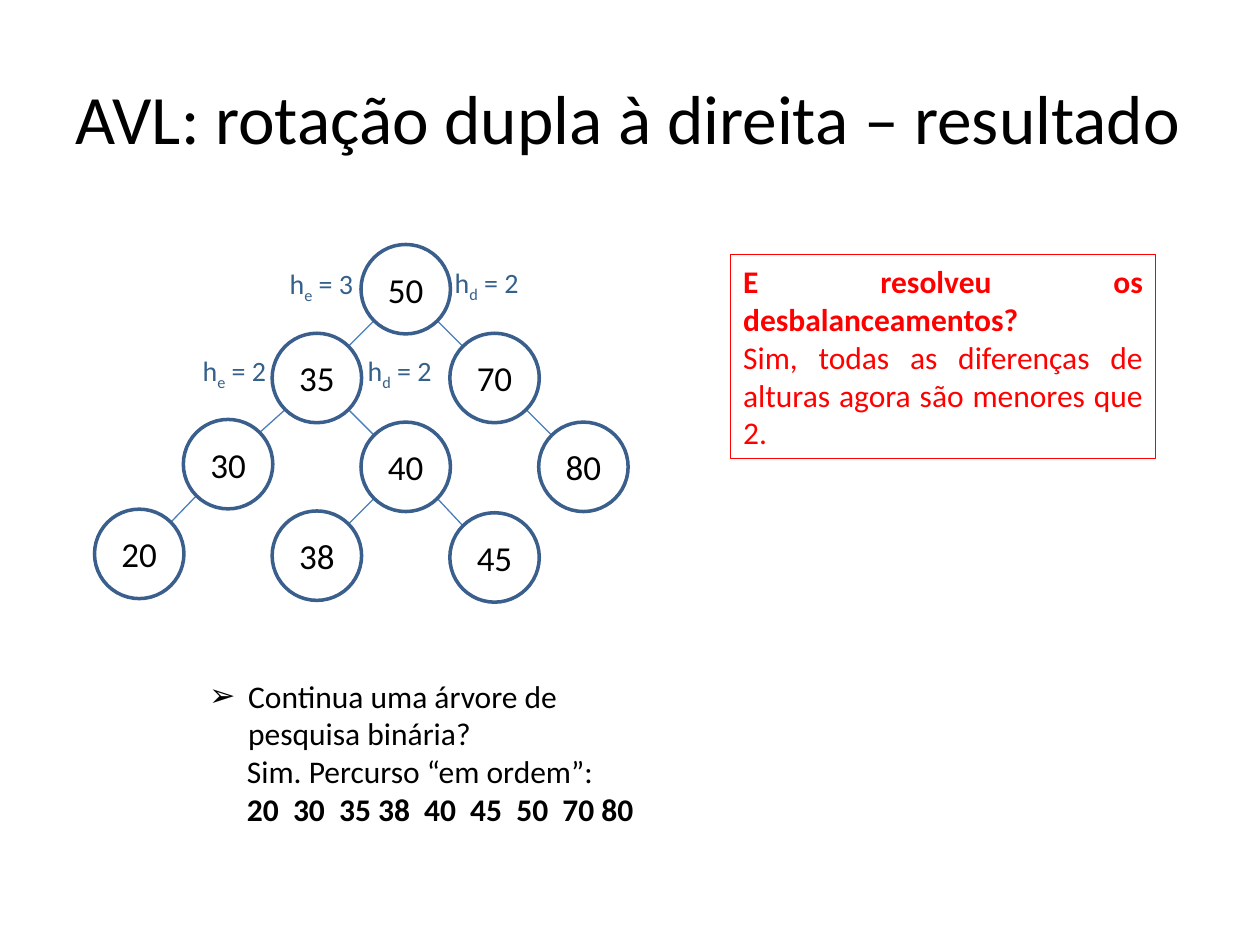
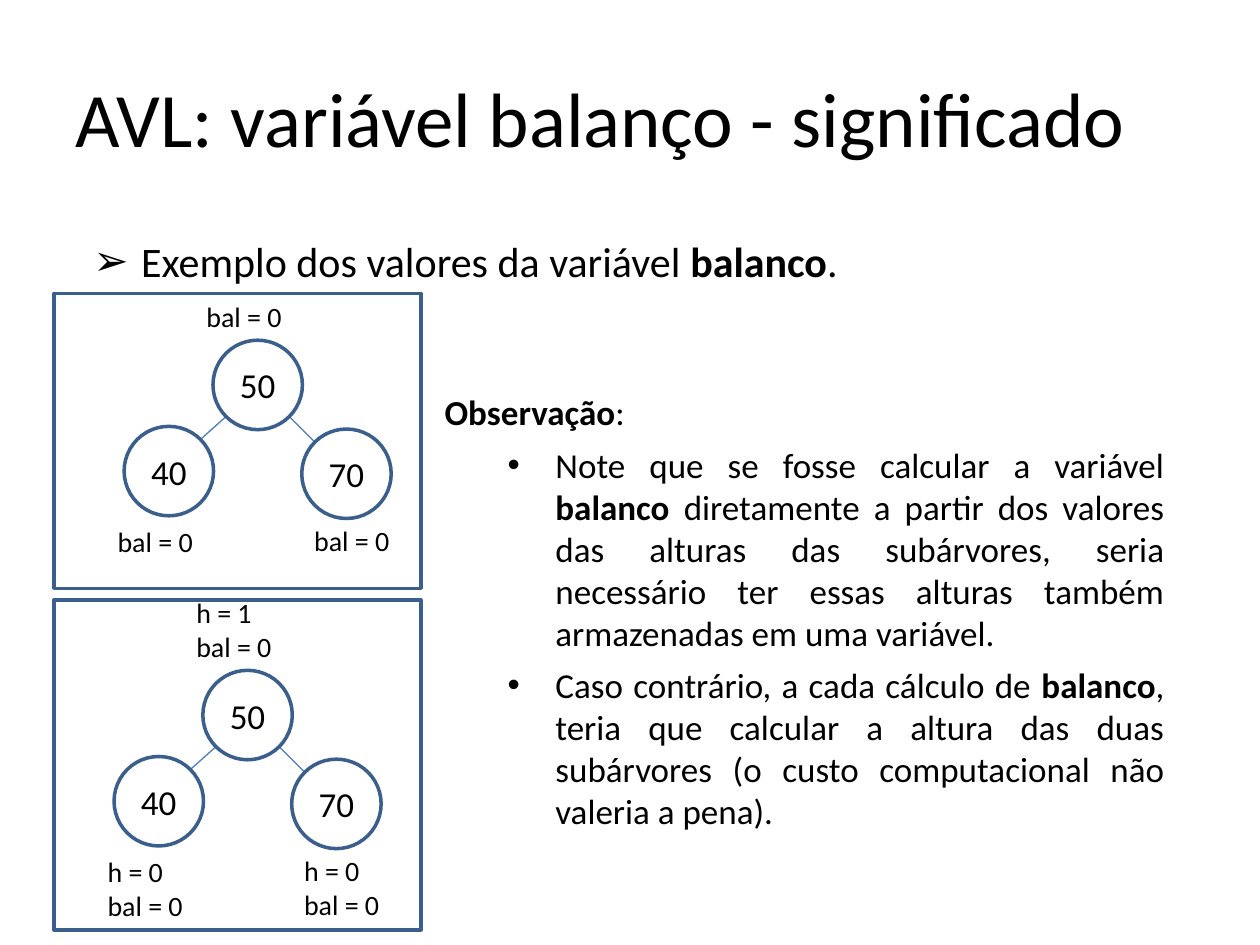
from dataclasses import dataclass
from math import sqrt

from lxml import etree
from pptx import Presentation
from pptx import util as u
from pptx.dml.color import RGBColor
from pptx.enum import shapes, text
from pptx.oxml import ns


@dataclass(frozen=True)
class Theme:
    font: str = "Calibri"
    bullet_font: str = "Arial"
    ink: str = "000000"
    outline: str = "3A5F8C"
    edge: str = "4B7EBC"
    height: str = "35608A"
    alert: str = "FF0000"
    title: float = 44
    long_title: float = 39.6
    lead: float = 24
    body: float = 20
    note: float = 18
    label: float = 16
    thick: float = 2
    thin: float = 0.75


THEME = Theme()
NODE = 0.71
STEP = 0.705
LABEL_WIDTH = 1.02
LABEL_HEIGHTS = {1: 0.37, 2: 0.64}
LEFT, CENTER, JUSTIFY = text.PP_ALIGN.LEFT, text.PP_ALIGN.CENTER, text.PP_ALIGN.JUSTIFY


def place(item, left, top, width, height):
    item.left, item.top = u.Inches(left), u.Inches(top)
    item.width, item.height = u.Inches(width), u.Inches(height)


def style_para(para, size, color=THEME.ink, align=LEFT, before=0):
    para.font.name = THEME.font
    para.font.size = u.Pt(size)
    para.font.color.rgb = RGBColor.from_string(color)
    para.alignment = align
    para.space_before = u.Pt(before)


def add_spans(para, content):
    for index, part in enumerate(content.split("**")):
        for number, line in enumerate(part.split("\n")):
            if number:
                para.add_line_break()
            if line:
                span = para.add_run()
                span.text = line
                if index % 2:
                    span.font.bold = True


def set_indent(para, margin, hanging=0, bullet=None):
    properties = para._p.get_or_add_pPr()
    properties.set("marL", str(u.Inches(margin)))
    properties.set("indent", str(u.Inches(-hanging)))
    if bullet:
        face = etree.SubElement(properties, ns.qn("a:buFont"))
        face.set("typeface", THEME.bullet_font)
        etree.SubElement(properties, ns.qn("a:buChar")).set("char", bullet)
    else:
        etree.SubElement(properties, ns.qn("a:buNone"))


def next_para(frame):
    first = frame.paragraphs[0]
    return frame.add_paragraph() if first.runs else first


def write(frame, content, size, color=THEME.ink, align=LEFT, before=0, indent=None):
    para = next_para(frame)
    if indent:
        set_indent(para, *indent)
    add_spans(para, content)
    style_para(para, size, color, align, before)


def fix_frame(item):
    frame = item.text_frame
    frame.word_wrap = True
    frame.auto_size = text.MSO_AUTO_SIZE.NONE
    return frame


def add_page(deck, title, size, width, body_at):
    page = deck.slides.add_slide(deck.slide_layouts[1])
    heading, body = page.placeholders
    place(heading, 0.5, 0.3, width, 1.25)
    write(fix_frame(heading), title, size)
    place(body, *body_at)
    return page, fix_frame(body)


def add_text_box(page, left, top, width, height):
    return fix_frame(page.shapes.add_textbox(*map(u.Inches, (left, top, width, height))))


def add_outline(page, kind, at, color=THEME.outline, weight=THEME.thick):
    item = page.shapes.add_shape(kind, *map(u.Inches, at))
    item.shadow.inherit = False
    item.fill.background()
    item.line.color.rgb = RGBColor.from_string(color)
    item.line.width = u.Pt(weight)
    return item


def add_node(page, value, left, top):
    circle = add_outline(page, shapes.MSO_SHAPE.OVAL, (left, top, NODE, NODE))
    frame = circle.text_frame
    frame.word_wrap = False
    frame.vertical_anchor = text.MSO_ANCHOR.MIDDLE
    write(frame, str(value), THEME.body, align=CENTER)


def add_edge(page, parent, child):
    reach = NODE / 2 / sqrt(2)
    side = reach if child[0] > parent[0] else -reach
    middle = NODE / 2
    ends = (parent[0] + middle + side, parent[1] + middle + reach,
            child[0] + middle - side, child[1] + middle - reach)
    edge = page.shapes.add_connector(shapes.MSO_CONNECTOR.STRAIGHT, *map(u.Inches, ends))
    edge.line.color.rgb = RGBColor.from_string(THEME.edge)
    edge.line.width = u.Pt(THEME.thin)
    etree.SubElement(edge._element.spPr, ns.qn("a:effectLst"))


def add_tree(page, left, top, nodes, edges):
    spots = {value: (left + column * STEP, top + row * STEP)
             for value, (column, row) in nodes.items()}
    for parent, child in edges:
        add_edge(page, spots[parent], spots[child])
    for value, spot in spots.items():
        add_node(page, value, *spot)
    return spots


def add_height(page, side, value, left, top):
    para = add_text_box(page, left, top, 0.78, LABEL_HEIGHTS[1]).paragraphs[0]
    for part in ("h", side, f" = {value}"):
        span = para.add_run()
        span.text = part
        if part == side:
            span._r.get_or_add_rPr().set("baseline", "-25000")
    style_para(para, THEME.label, THEME.height)


def add_label(page, lines, left, top):
    frame = add_text_box(page, left, top, LABEL_WIDTH, LABEL_HEIGHTS[len(lines)])
    for line in lines:
        write(frame, line, THEME.label)


def add_balance_panel(page, top, height, root_left, root_top, root_lines, leaf_lines):
    add_outline(page, shapes.MSO_SHAPE.RECTANGLE, (0.43, top, 2.91, height))
    spots = add_tree(page, root_left, root_top,
                     {50: (0, 0), 40: (-1, 0.97), 70: (1, 1)},
                     [(50, 40), (50, 70)])
    add_label(page, root_lines, root_left - 0.15, root_top - LABEL_HEIGHTS[len(root_lines)])
    for value, shift, drop in ((40, -0.15, 0.73), (70, 0, 0.7)):
        left, node_top = spots[value]
        add_label(page, leaf_lines, left + shift, node_top + drop)


def build_rotation_result(deck):
    page, order = add_page(deck, "AVL: rotação dupla à direita – resultado",
                           THEME.long_title, 9.15, (1.56, 5.32, 3.69, 1.31))
    nodes = {50: (3, 0), 35: (2, 1), 70: (4, 1), 30: (1, 1.97), 40: (3, 2),
             80: (5, 2), 20: (0, 2.98), 38: (2, 3), 45: (4, 3.02)}
    edges = [(50, 35), (50, 70), (35, 30), (35, 40), (70, 80),
             (30, 20), (40, 38), (40, 45)]
    add_tree(page, 0.75, 1.94, nodes, edges)
    for side, value, left, top in (("e", 3, 2.2, 2.07), ("d", 2, 3.51, 2.06),
                                   ("e", 2, 1.51, 2.76), ("d", 2, 2.82, 2.76)):
        add_height(page, side, value, left, top)

    answer = fix_frame(add_outline(page, shapes.MSO_SHAPE.RECTANGLE,
                                   (5.8, 2.02, 3.37, 1.62), THEME.alert, THEME.thin))
    for line in ("**E resolveu os desbalanceamentos?**",
                 "Sim, todas as diferenças de alturas agora são menores que 2."):
        write(answer, line, THEME.note, THEME.alert, JUSTIFY)

    write(order, "Continua uma árvore de pesquisa binária?", THEME.note,
          indent=(0.31, 0.31, "➢"))
    write(order, "Sim. Percurso “em ordem”:\n**20  30  35 38  40  45  50  70 80**",
          THEME.note, indent=(0.3,))


def build_balance_meaning(deck):
    page, lead = add_page(deck, "AVL: variável balanço - significado",
                          THEME.title, 9, (0.64, 1.82, 8.45, 0.5))
    write(lead, "Exemplo dos valores da variável **balanco**.", THEME.lead,
          indent=(0.38, 0.38, "➢"))
    add_balance_panel(page, 2.33, 2.34, 1.69, 2.7, ["bal = 0"], ["bal = 0"])
    add_balance_panel(page, 4.76, 2.62, 1.61, 5.32,
                      ["h = 1", "bal = 0"], ["h = 0", "bal = 0"])

    remark = add_text_box(page, 3.43, 3.05, 5.91, 3.64)
    write(remark, "**Observação**:", THEME.body, align=JUSTIFY)
    for point in (
        "Note que se fosse calcular a variável **balanco** diretamente a partir dos "
        "valores das alturas das subárvores, seria necessário ter essas alturas também "
        "armazenadas em uma variável.",
        "Caso contrário, a cada cálculo de **balanco**, teria que calcular a altura das "
        "duas subárvores (o custo computacional não valeria a pena).",
    ):
        write(remark, point, THEME.body, align=JUSTIFY, before=6,
              indent=(0.88, 0.38, "•"))


def main():
    deck = Presentation()
    deck.slide_width, deck.slide_height = u.Inches(10), u.Inches(7.5)
    build_rotation_result(deck)
    build_balance_meaning(deck)
    deck.save("out.pptx")


if __name__ == "__main__":
    main()
